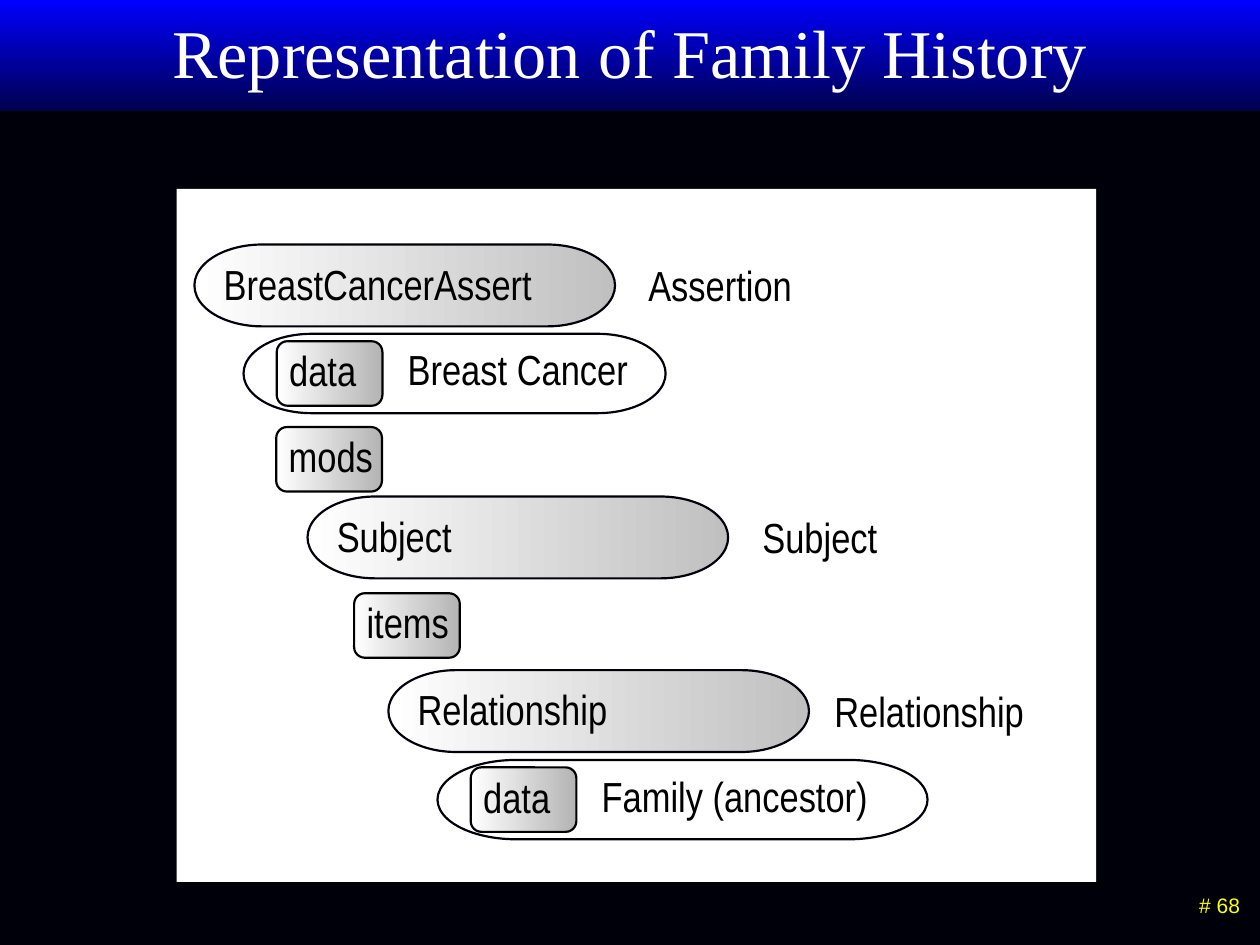
from pptx import Presentation
from pptx.dml.color import RGBColor as Rgb
from pptx.enum.shapes import MSO_SHAPE as Kind
from pptx.enum.text import MSO_AUTO_SIZE as Auto, PP_ALIGN as Align
from pptx.util import Cm, Pt

HUES = {
    "night": "00000A", "white": "FFFFFF", "black": "000000",
    "blue": "0000FF", "navy": "00004F", "yellow": "FFFF00",
    "pill": "C0C0C0", "tab": "B4B4B4",
}


def hue(name):
    return Rgb.from_string(HUES[name])


def shape(group, kind, box, fill, line=None, angle=0):
    item = group.add_shape(kind, *map(Cm, box))
    item.shadow.inherit = False
    if isinstance(fill, tuple):
        item.fill.gradient()
        item.fill.gradient_angle = angle
        for stop, name in zip(item.fill.gradient_stops, fill):
            stop.color.rgb = hue(name)
    else:
        item.fill.solid()
        item.fill.fore_color.rgb = hue(fill)
    if line:
        item.line.color.rgb = hue(line)
        item.line.width = Pt(1.25)
    else:
        item.line.fill.background()
    return item


def write(group, box, words, size=24, font="Arial Narrow", color="black",
          align=Align.LEFT, wrap=True, grow=True):
    frame = group.add_textbox(*map(Cm, box)).text_frame
    frame.word_wrap = wrap
    frame.auto_size = Auto.SHAPE_TO_FIT_TEXT if grow else Auto.NONE
    para = frame.paragraphs[0]
    para.alignment = align
    run = para.add_run()
    run.text = words
    run.font.size = Pt(size)
    run.font.name = font
    run.font.color.rgb = hue(color)


def header(slide, box):
    x, y, w, h = box
    bar = shape(slide.shapes, Kind.ROUNDED_RECTANGLE, box,
                ("blue", "navy"), angle=270)
    bar.adjustments[0] = 0
    write(slide.shapes, (x + 1.91, y + 0.08, w - 3.82, 3.18),
          "Representation of Family History", 39, "Times New Roman",
          "white", Align.CENTER, grow=False)


def footer(slide, box):
    write(slide.shapes, box, "# 68", 12, "Arial", "yellow",
          Align.RIGHT, grow=False)


def tab(slide, x, y, words, width):
    group = slide.shapes.add_group_shape().shapes
    shape(group, Kind.ROUNDED_RECTANGLE, (x, y, 2.13, 1.3),
          ("white", "tab"), "black")
    write(group, (x, y - 0.05, width, 1.27), words, wrap=False)


def frame_row(slide, x, y, name, label, gap, width):
    shape(slide.shapes, Kind.FLOWCHART_TERMINATOR, (x, y, 8.48, 1.65),
          ("white", "pill"), "night")
    write(slide.shapes, (x + 0.34, y + 0.15, 7.82, 1.27), name)
    write(slide.shapes, (x + gap, y + 0.18, width, 1.27), label)


def data_row(slide, x, y, width, words):
    shape(slide.shapes, Kind.FLOWCHART_TERMINATOR, (x, y, width, 1.6),
          "white", "night")
    write(slide.shapes, (x + 3.06, y + 0.08, 6.1, 1.27), words)
    tab(slide, x + 0.67, y + 0.15, "data", 1.88)


def panel(slide, box):
    x, y = box[:2]
    shape(slide.shapes, Kind.RECTANGLE, box, "white")
    data_row(slide, x + 1.35, y + 2.92, 8.51, "Breast Cancer")
    data_row(slide, x + 5.26, y + 11.51, 9.88, "Family (ancestor)")
    for dx, dy, name, label, gap, width in (
        (0.36, 1.12, "BreastCancerAssert", "Assertion", 8.9, 3.63),
        (2.64, 6.2, "Subject", "Subject", 8.92, 5.38),
        (4.27, 9.7, "Relationship", "Relationship", 8.74, 5.38),
    ):
        frame_row(slide, x + dx, y + dy, name, label, gap, width)
    tab(slide, x + 2.01, y + 4.8, "mods", 2.21)
    tab(slide, x + 3.58, y + 8.15, "items", 2.18)


def main():
    deck = Presentation()
    deck.slide_width, deck.slide_height = Cm(25.4), Cm(19.05)
    slide = deck.slides.add_slide(deck.slide_layouts[6])
    back = slide.background.fill
    back.solid()
    back.fore_color.rgb = hue("night")
    header(slide, (0, 0, 25.4, 2.24))
    footer(slide, (22.61, 17.86, 2.64, 0.86))
    panel(slide, (3.56, 3.81, 18.54, 13.97))
    deck.save("out.pptx")


if __name__ == "__main__":
    main()
